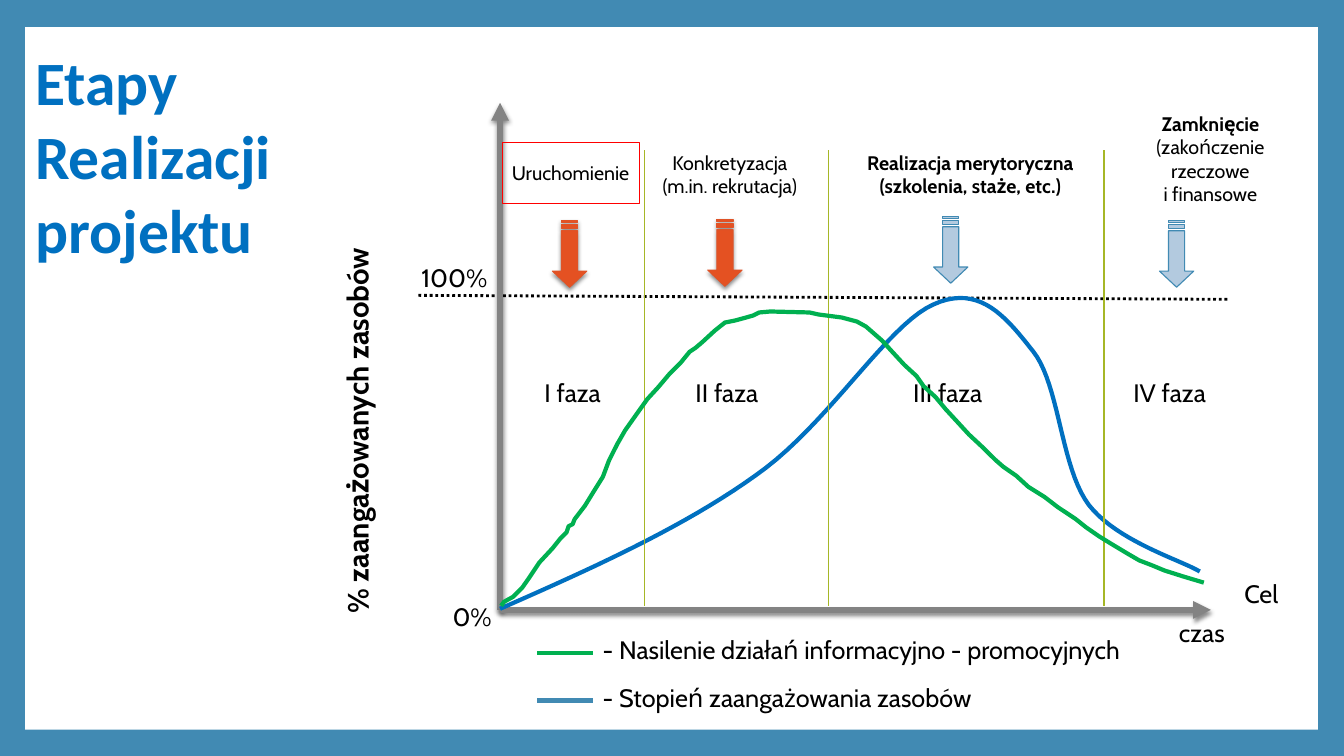
import pptx
import pptx.util
import pptx.dml.color
import pptx.enum.dml
import pptx.enum.shapes
import pptx.enum.text
import pptx.oxml
import pptx.oxml.ns
from dataclasses import dataclass

Inches = pptx.util.Inches
Point = tuple[float, float]


@dataclass(frozen=True)
class Theme:
    frame: str = "418AB3"
    paper: str = "FFFFFF"
    ink: str = "000000"
    blue: str = "0070C0"
    green: str = "00B050"
    grey: str = "838383"
    lime: str = "A6B727"
    red: str = "FF0000"
    orange: str = "E45122"
    rust: str = "DF5327"
    pale: str = "B3CADF"
    font: str = "Cabin"
    head: str = "Calibri"
    small: int = 14
    body: int = 18
    side: int = 21
    title: int = 44


@dataclass(frozen=True)
class Label:
    lines: tuple[str, ...]
    box: tuple[float, float, float, float]
    bold: int = 0  # number of leading bold paragraphs


@dataclass(frozen=True)
class Arrow:
    mid: float
    top: float
    fill: str
    edge: str
    shade: bool


@dataclass(frozen=True)
class Key:
    text: str
    top: float
    color: str


THEME = Theme()
deck = pptx.Presentation()
deck.slide_width, deck.slide_height = Inches(13.33), Inches(7.5)
slide = deck.slides.add_slide(deck.slide_layouts[6])
shapes = slide.shapes


def rgb(code: str) -> pptx.dml.color.RGBColor:
    return pptx.dml.color.RGBColor.from_string(code)


def set_shade(shape, shown: bool) -> None:
    """Add an effect list: a soft drop shadow, or none."""
    inner = ('<a:outerShdw blurRad="38100" dist="25400" dir="5400000" rotWithShape="0">'
             '<a:srgbClr val="000000"><a:alpha val="45000"/></a:srgbClr></a:outerShdw>')
    space = pptx.oxml.ns.nsdecls("a")
    shape._element.spPr.append(pptx.oxml.parse_xml(
        f"<a:effectLst {space}>{inner if shown else ''}</a:effectLst>"))


def add_line(start: Point, end: Point, color: str, width: float,
             dots: bool = False, arrow: bool = False):
    line = shapes.add_connector(pptx.enum.shapes.MSO_CONNECTOR.STRAIGHT,
                                *map(Inches, start + end))
    line.line.color.rgb = rgb(color)
    line.line.width = pptx.util.Pt(width)
    if dots:
        line.line.dash_style = pptx.enum.dml.MSO_LINE.ROUND_DOT
    if arrow:
        line.line._get_or_add_ln().append(pptx.oxml.parse_xml(
            f'<a:tailEnd {pptx.oxml.ns.nsdecls("a")} type="triangle"/>'))
    set_shade(line, arrow)
    return line


def add_text(lines: tuple[str, ...], box: tuple, size: int = THEME.body,
             color: str = THEME.ink, font: str = THEME.font, bold: int = 0,
             left: bool = False, turn: float = 0):
    shape = shapes.add_textbox(*map(Inches, box))
    shape.rotation = turn
    frame = shape.text_frame
    frame.word_wrap = True
    frame.margin_left = frame.margin_right = Inches(0.1 if left else 0)
    frame.vertical_anchor = pptx.enum.text.MSO_ANCHOR.MIDDLE
    align = pptx.enum.text.PP_ALIGN
    for i, line in enumerate(lines):
        para = frame.add_paragraph() if i else frame.paragraphs[0]
        para.text = line
        para.alignment = align.LEFT if left else align.CENTER
        for run in para.runs:
            run.font.name, run.font.size = font, pptx.util.Pt(size)
            run.font.bold = i < bold
            run.font.color.rgb = rgb(color)
    return shape


def add_path(parts: list[list[Point]], color: str, width: float, close: bool = False):
    """Draw one outline made of one or more point lists."""
    spots = [[(Inches(x), Inches(y)) for x, y in part] for part in parts]
    pen = shapes.build_freeform(*spots[0][0], scale=1.0)
    for i, part in enumerate(spots):
        if i:
            pen.move_to(*part[0])
        pen.add_line_segments(part[1:], close=close)
    shape = pen.convert_to_shape()
    shape.fill.background()
    shape.line.color.rgb = rgb(color)
    shape.line.width = pptx.util.Pt(width)
    return shape


def add_curve(points: list[Point], color: str) -> None:
    add_path([points], color, 3).shadow.inherit = False


def bend(knots: list[Point], steps: int = 20) -> list[Point]:
    """Points along joined cubic curves: a start, then three knots per curve."""
    points = [knots[0]]
    for i in range(0, len(knots) - 1, 3):
        for step in range(1, steps + 1):
            t = step / steps
            parts = ((1 - t) ** 3, 3 * t * (1 - t) ** 2, 3 * t * t * (1 - t), t ** 3)
            x, y = (sum(w * knot[axis] for w, knot in zip(parts, knots[i:i + 4]))
                    for axis in (0, 1))
            points.append((x, y))
    return points


def add_arrow(item: Arrow) -> None:
    """Draw a down arrow with two stripes above its shaft."""
    half, wing = 0.08, 0.17
    stripes = [[(-half, a), (half, a), (half, b), (-half, b)]
               for a, b in ((0, 0.02), (0.04, 0.08))]
    body = [(-half, 0.1), (half, 0.1), (half, 0.5), (wing, 0.5), (0, 0.66),
            (-wing, 0.5), (-half, 0.5)]
    parts = [[(item.mid + x, item.top + y) for x, y in part] for part in (body, *stripes)]
    arrow = add_path(parts, item.edge, 0.79, close=True)
    arrow.fill.solid()
    arrow.fill.fore_color.rgb = rgb(item.fill)
    set_shade(arrow, item.shade)


# Frame and white page
slide.background.fill.solid()
slide.background.fill.fore_color.rgb = rgb(THEME.frame)
page = shapes.add_shape(pptx.enum.shapes.MSO_SHAPE.RECTANGLE,
                        *map(Inches, (0.25, 0.27, 12.82, 6.97)))
page.fill.solid()
page.fill.fore_color.rgb = rgb(THEME.paper)
page.line.fill.background()
page.shadow.inherit = False

# Full-use mark and axes
add_line((4.15, 2.93), (12.2, 2.97), THEME.ink, 2, dots=True)
for tip in ((4.96, 1.02), (12.01, 6.05)):
    add_line((4.96, 6.05), tip, THEME.grey, 4.25, arrow=True)

# Curve of resource use
add_curve(bend([
    (4.96, 6.04), (5.87, 5.64), (6.78, 5.23), (7.49, 4.72), (8.21, 4.22),
    (8.8, 3.22), (9.26, 3.02), (9.72, 2.81), (9.99, 3.16), (10.25, 3.49),
    (10.51, 3.82), (10.52, 4.64), (10.8, 5.01), (11.08, 5.37), (11.72, 5.56),
    (11.9, 5.67)]), THEME.blue)

# Phase borders and names
for x in (6.39, 8.22, 10.95):
    add_line((x, 1.49), (x, 6.01), THEME.lime, 0.79)
for x, name in zip((5.25, 6.78, 8.97, 11.17), ("I", "II", "III", "IV")):
    add_text((f"{name} faza",), (x, 3.41, 0.86, 0.96))

# Axis labels
add_text(("Cel",), (12.03, 5.55, 0.96, 0.67))
add_text(("czas",), (11.11, 5.94, 1.62, 0.67))
add_text(("0%",), (4.39, 5.78, 0.76, 0.67), left=True)
add_text(("100%",), (4.08, 2.42, 0.92, 0.67), left=True)
add_text(("% zaangażowanych zasobów",), (1.15, 3.39, 4.78, 0.81),
         size=THEME.side, bold=1, left=True, turn=270)

# Arrows
for item in (Arrow(5.65, 2.19, THEME.orange, THEME.rust, True),
             Arrow(7.19, 2.18, THEME.orange, THEME.rust, True),
             Arrow(9.43, 2.15, THEME.pale, THEME.frame, False),
             Arrow(11.67, 2.19, THEME.pale, THEME.frame, False)):
    add_arrow(item)

# Phase heads, the first one boxed
heads = [add_text(label.lines, label.box, size=THEME.small, bold=label.bold) for label in (
    Label(("Uruchomienie",), (4.98, 1.41, 1.36, 0.61)),
    Label(("Konkretyzacja", "(m.in. rekrutacja)"), (6.5, 1.48, 1.48, 0.5)),
    Label(("Realizacja merytoryczna", "(szkolenia, staże, etc.)"), (8.53, 1.48, 2.19, 0.5), 2),
    Label(("Zamknięcie", "(zakończenie\nrzeczowe", "i finansowe"), (11.03, 1.09, 1.95, 0.97), 1))]
heads[0].line.color.rgb = rgb(THEME.red)
heads[0].line.width = pptx.util.Pt(0.75)

# Legend
for key in (Key("- Nasilenie działań informacyjno - promocyjnych", 6.25, THEME.green),
            Key("- Stopień zaangażowania zasobów", 6.72, THEME.frame)):
    add_line((5.33, key.top + 0.23), (5.88, key.top + 0.23), key.color, 3)
    add_text((key.text,), (5.88, key.top, 5.9, 0.39), left=True)

# Curve of promotion
add_curve([
    (4.97, 6.01), (5, 5.97), (5.09, 5.92), (5.18, 5.83), (5.25, 5.73), (5.35, 5.58),
    (5.48, 5.44), (5.56, 5.34), (5.62, 5.28), (5.64, 5.22), (5.68, 5.2), (5.7, 5.15),
    (5.8, 5.02), (5.88, 4.89), (5.98, 4.73), (6.04, 4.57), (6.12, 4.41), (6.2, 4.27),
    (6.32, 4.1), (6.42, 3.96), (6.53, 3.84), (6.64, 3.71), (6.75, 3.6), (6.84, 3.49),
    (6.9, 3.45), (6.97, 3.39), (7.09, 3.28), (7.19, 3.2), (7.29, 3.18), (7.4, 3.15),
    (7.47, 3.13), (7.53, 3.1), (7.64, 3.09), (8.03, 3.1), (8.12, 3.12), (8.35, 3.15),
    (8.5, 3.19), (8.59, 3.24), (8.75, 3.38), (8.85, 3.49), (8.97, 3.62), (9.09, 3.73),
    (9.16, 3.83), (9.28, 3.94), (9.38, 4.06), (9.5, 4.19), (9.61, 4.31), (9.76, 4.45),
    (9.87, 4.56), (9.95, 4.63), (10.08, 4.72), (10.2, 4.83), (10.36, 4.93), (10.49, 5.03),
    (10.67, 5.15), (10.77, 5.23), (10.9, 5.32), (11.03, 5.4), (11.18, 5.49), (11.3, 5.56),
    (11.43, 5.61), (11.55, 5.66), (11.74, 5.72), (11.94, 5.78)], THEME.green)

# Title
add_text(("Etapy", "Realizacji", "projektu"), (0.25, 0.14, 2.89, 2.79), size=THEME.title,
         color=THEME.blue, font=THEME.head, bold=3, left=True)

deck.save("out.pptx")
